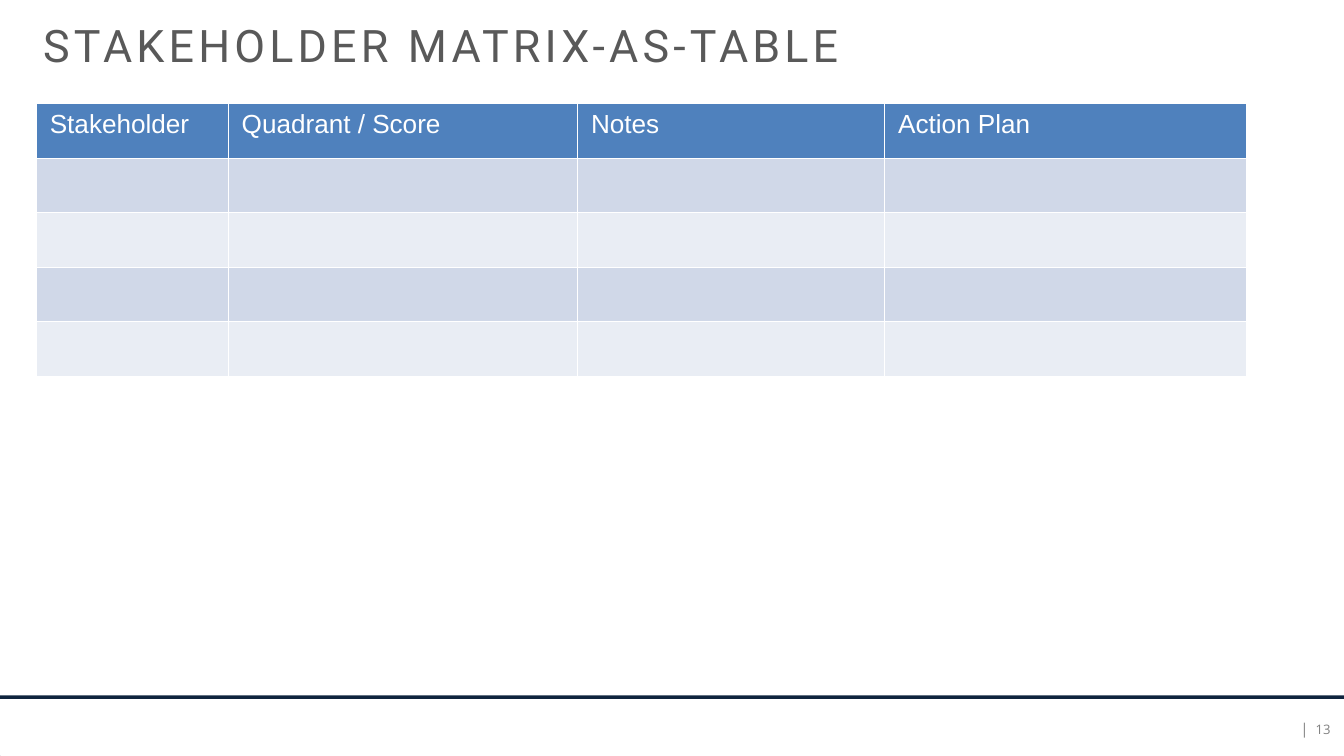
import pptx
import pptx.dml.color
import pptx.enum.shapes
import pptx.enum.text
import pptx.oxml.ns
import pptx.util
import lxml.etree

Pt = pptx.util.Pt
SLIDE_WIDTH, SLIDE_HEIGHT = 1440, 810
NAVY, WHITE, BLUE = "0F243E", "FFFFFF", "4F81BD"
BANDS = ("D0D8E8", "E9EDF4")
GREY, TITLE_GREY = "808080", "595959"

HEADINGS = ("Stakeholder", "Quadrant / Score", "Notes", "Action Plan")
COLUMN_WIDTHS = (205.6, 374.3, 329, 387.1)
ROW_COUNT, ROW_HEIGHT = 5, 58.4


def color(hex_string):
    return pptx.dml.color.RGBColor.from_string(hex_string)


def add_run(paragraph, text, size, font_name, hex_color):
    run = paragraph.add_run()
    run.text = text
    run.font.size = Pt(size)
    run.font.name = font_name
    run.font.color.rgb = color(hex_color)
    return run


def add_panel(slide, top, height, fill, line=None):
    """Add a rectangle as wide as the slide."""
    shape = slide.shapes.add_shape(
        pptx.enum.shapes.MSO_SHAPE.RECTANGLE,
        Pt(0), Pt(top), Pt(SLIDE_WIDTH), Pt(height))
    shape.shadow.inherit = False
    shape.fill.solid()
    shape.fill.fore_color.rgb = color(fill)
    if line:
        shape.line.color.rgb = color(line)
        shape.line.width = Pt(0.75)
    else:
        shape.line.fill.background()


def add_footer_text(slide, left, top, width, height, text, size):
    shape = slide.shapes.add_textbox(Pt(left), Pt(top), Pt(width), Pt(height))
    frame = shape.text_frame
    frame.margin_left = frame.margin_right = Pt(0)
    frame.margin_top = frame.margin_bottom = Pt(0)
    frame.word_wrap = False
    frame.auto_size = pptx.enum.text.MSO_AUTO_SIZE.SHAPE_TO_FIT_TEXT
    paragraph = frame.paragraphs[0]
    paragraph.alignment = pptx.enum.text.PP_ALIGN.RIGHT
    add_run(paragraph, text, size, "Open Sans", GREY)


def set_cell_borders(cell, hex_color, width):
    properties = cell._tc.get_or_add_tcPr()
    qn = pptx.oxml.ns.qn
    for index, side in enumerate(("a:lnL", "a:lnR", "a:lnT", "a:lnB")):
        border = lxml.etree.Element(qn(side), w=str(int(Pt(width))))
        fill = lxml.etree.SubElement(border, qn("a:solidFill"))
        lxml.etree.SubElement(fill, qn("a:srgbClr"), val=hex_color)
        properties.insert(index, border)


def add_matrix(slide):
    frame = slide.shapes.add_table(
        ROW_COUNT, len(HEADINGS), Pt(39), Pt(111),
        Pt(sum(COLUMN_WIDTHS)), Pt(ROW_COUNT * ROW_HEIGHT))
    table = frame.table
    for column, width in zip(table.columns, COLUMN_WIDTHS):
        column.width = Pt(width)
    for row_index, row in enumerate(table.rows):
        row.height = Pt(ROW_HEIGHT)
        fill = BANDS[(row_index - 1) % 2] if row_index else BLUE
        for cell in row.cells:
            cell.margin_left = cell.margin_right = Pt(14.4)
            cell.margin_top = cell.margin_bottom = Pt(7.2)
            cell.fill.solid()
            cell.fill.fore_color.rgb = color(fill)
            set_cell_borders(cell, WHITE, 1)
    for cell, heading in zip(table.rows[0].cells, HEADINGS):
        add_run(cell.text_frame.paragraphs[0], heading, 28, "Arial", WHITE)


def set_title(slide, text):
    title = slide.shapes.title
    title.left, title.top = Pt(39), Pt(15)
    title.width, title.height = Pt(931), Pt(65.5)
    frame = title.text_frame
    frame.word_wrap = True
    frame.auto_size = pptx.enum.text.MSO_AUTO_SIZE.NONE
    frame.vertical_anchor = pptx.enum.text.MSO_ANCHOR.TOP
    paragraph = frame.paragraphs[0]
    paragraph.alignment = pptx.enum.text.PP_ALIGN.LEFT
    run = add_run(paragraph, text, 48, "Roboto", TITLE_GREY)
    # Letter spacing, in hundredths of a point
    run.font._element.set("spc", "450")
    # Bring the title in front of the panels
    slide.shapes._spTree.append(title._element)


def main():
    presentation = pptx.Presentation()
    presentation.slide_width = Pt(SLIDE_WIDTH)
    presentation.slide_height = Pt(SLIDE_HEIGHT)
    slide = presentation.slides.add_slide(presentation.slide_layouts[5])

    # Navy backdrop, showing as a rule between the white panels
    add_panel(slide, 0, SLIDE_HEIGHT, NAVY)
    add_panel(slide, 749.5, 59.5, WHITE, WHITE)
    add_panel(slide, 0, 745, WHITE)

    # Page number
    add_footer_text(slide, 1407.6, 773.3, 18, 17.3, "13", 14)
    add_footer_text(slide, 1393.2, 771.1, 8.6, 19.4, "|", 16)

    # Content
    add_matrix(slide)
    set_title(slide, "STAKEHOLDER MATRIX-AS-TABLE")
    presentation.save("out.pptx")


if __name__ == "__main__":
    main()
